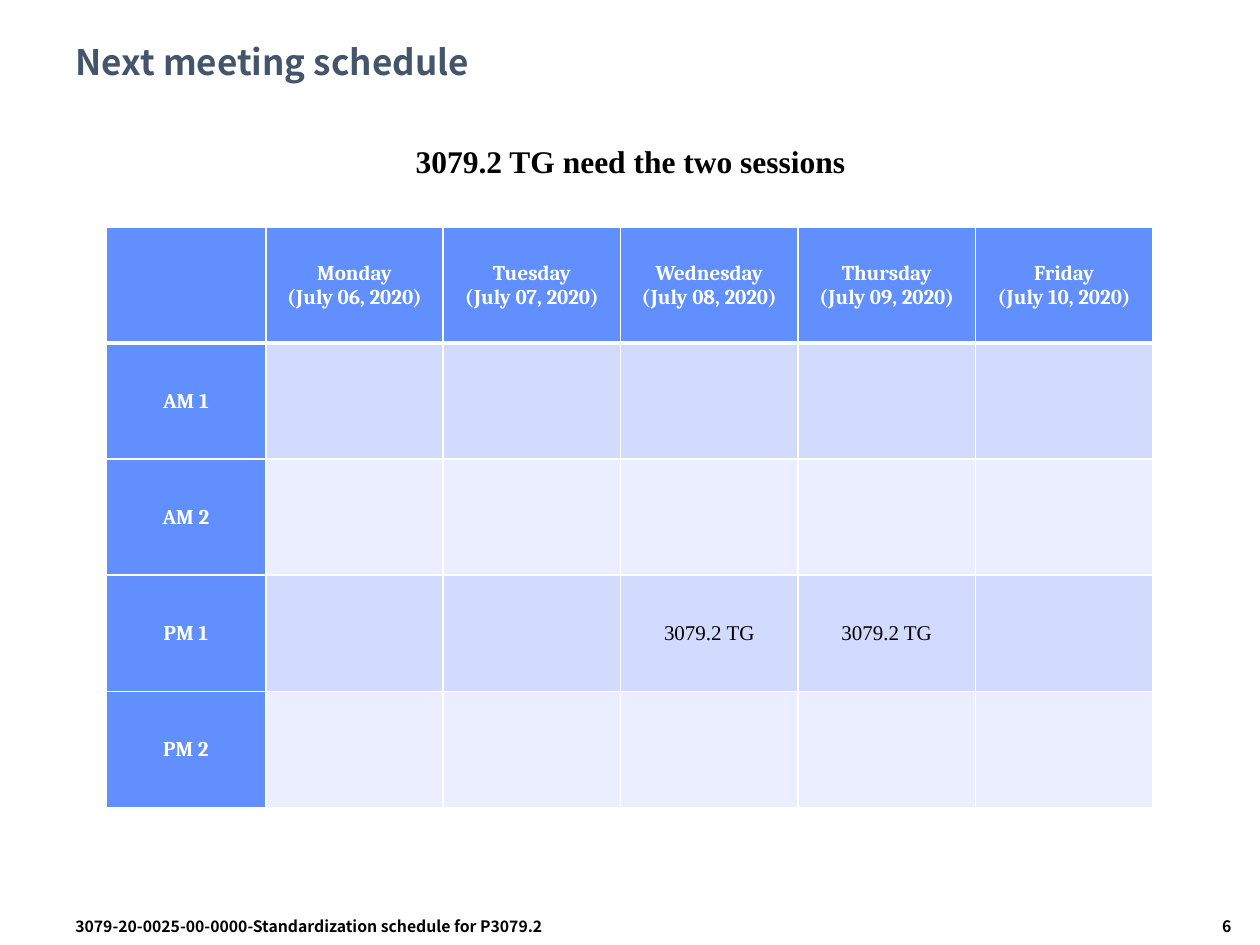
from lxml.etree import SubElement
from pptx import Presentation
from pptx.dml.color import RGBColor
from pptx.enum.text import MSO_ANCHOR as Anchor, PP_ALIGN as Align
from pptx.oxml.ns import qn
from pptx.util import Inches, Pt

COLORS = {
    "title": "44546A",
    "text": "000000",
    "white": "FFFFFF",
    "header": "618FFD",
    "band_dark": "D2DBFE",
    "band_light": "EAEEFF",
}
SANS, SERIF, HEADER_FONT = "Noto Sans CJK KR", "Times New Roman", "Cambria"

DAYS = ["Monday", "Tuesday", "Wednesday", "Thursday", "Friday"]
SESSIONS = ["AM 1", "AM 2", "PM 1", "PM 2"]
FIRST_DATE = 6
BOOKED = {("PM 1", "Wednesday"), ("PM 1", "Thursday")}
BOOKING = "3079.2 TG"


def color(name):
    return RGBColor.from_string(COLORS[name])


def write(frame, text, font_name, size, color_name, bold=True, align=Align.LEFT):
    frame.text = text
    for paragraph in frame.paragraphs:
        paragraph.alignment = align
        font = paragraph.font
        font.name, font.size, font.bold = font_name, Pt(size), bold
        font.color.rgb = color(color_name)


def place(shape, box):
    shape.left, shape.top, shape.width, shape.height = map(Inches, box)


def add_title(slide, box):
    title = slide.shapes.title
    place(title, box)
    frame = title.text_frame
    frame.vertical_anchor = Anchor.MIDDLE
    write(frame, "Next meeting schedule", SANS, 20, "title")
    frame.paragraphs[0].line_spacing = 0.9


def add_label(slide, box, text, font_name, size, align=Align.LEFT):
    frame = slide.shapes.add_textbox(*map(Inches, box)).text_frame
    frame.word_wrap = True
    write(frame, text, font_name, size, "text", align=align)


def set_borders(cell, **widths):
    """Draw white borders; widths in points by side: L, R, T, B."""
    properties = cell._tc.get_or_add_tcPr()
    for side in "LRTB":
        line = SubElement(properties, qn(f"a:ln{side}"), w=str(Pt(widths.get(side, 1))))
        fill = SubElement(line, qn("a:solidFill"))
        SubElement(fill, qn("a:srgbClr"), val=COLORS["white"])


def cell_text(row, column):
    if row == 0:
        return f"{DAYS[column - 1]}\n(July {FIRST_DATE + column - 1:02d}, 2020)" if column else ""
    if column == 0:
        return SESSIONS[row - 1]
    return BOOKING if (SESSIONS[row - 1], DAYS[column - 1]) in BOOKED else ""


def fill_cell(cell, row, column):
    is_header = row == 0 or column == 0
    # Thick rule between the day headings and the sessions
    set_borders(cell, T=3 if row == 1 else 1, B=3 if row == 0 else 1)
    band = "band_dark" if row % 2 else "band_light"
    cell.fill.solid()
    cell.fill.fore_color.rgb = color("header" if is_header else band)
    cell.vertical_anchor = Anchor.MIDDLE
    cell.margin_left = cell.margin_right = cell.margin_top = Inches(0.01)
    cell.margin_bottom = 0
    text = cell_text(row, column)
    if text:
        font_name, color_name = (HEADER_FONT, "white") if is_header else (SERIF, "text")
        write(cell.text_frame, text, font_name, 12, color_name, is_header, Align.CENTER)


def add_schedule(slide, box, label_width):
    row_count, column_count = len(SESSIONS) + 1, len(DAYS) + 1
    table = slide.shapes.add_table(row_count, column_count, *map(Inches, box)).table
    day_width = (box[2] - label_width) / len(DAYS)
    for index, column in enumerate(table.columns):
        column.width = Inches(day_width if index else label_width)
    for row in range(row_count):
        table.rows[row].height = Inches(box[3] / row_count)
        for column in range(column_count):
            fill_cell(table.cell(row, column), row, column)


def add_footer(slide, box, number_width):
    left, top, width, height = box
    text = "3079-20-0025-00-0000-Standardization schedule for P3079.2"
    add_label(slide, (left, top, 7.33, height), text, SANS, 9)
    number_box = (left + width - number_width, top, number_width, height)
    add_label(slide, number_box, "6", SANS, 9, Align.RIGHT)


def main():
    presentation = Presentation()
    presentation.slide_width, presentation.slide_height = Inches(10), Inches(7.5)
    slide = presentation.slides.add_slide(presentation.slide_layouts[5])

    add_title(slide, (0.5, 0.17, 9, 0.67))
    add_label(slide, (0.17, 1.08, 9.67, 0.4), "3079.2 TG need the two sessions",
              SERIF, 18, Align.CENTER)
    add_schedule(slide, (0.84, 1.8, 8.31, 4.61), label_width=1.27)
    add_footer(slide, (0.5, 7.23, 9.37, 0.27), number_width=1.62)

    presentation.save("out.pptx")


if __name__ == "__main__":
    main()
